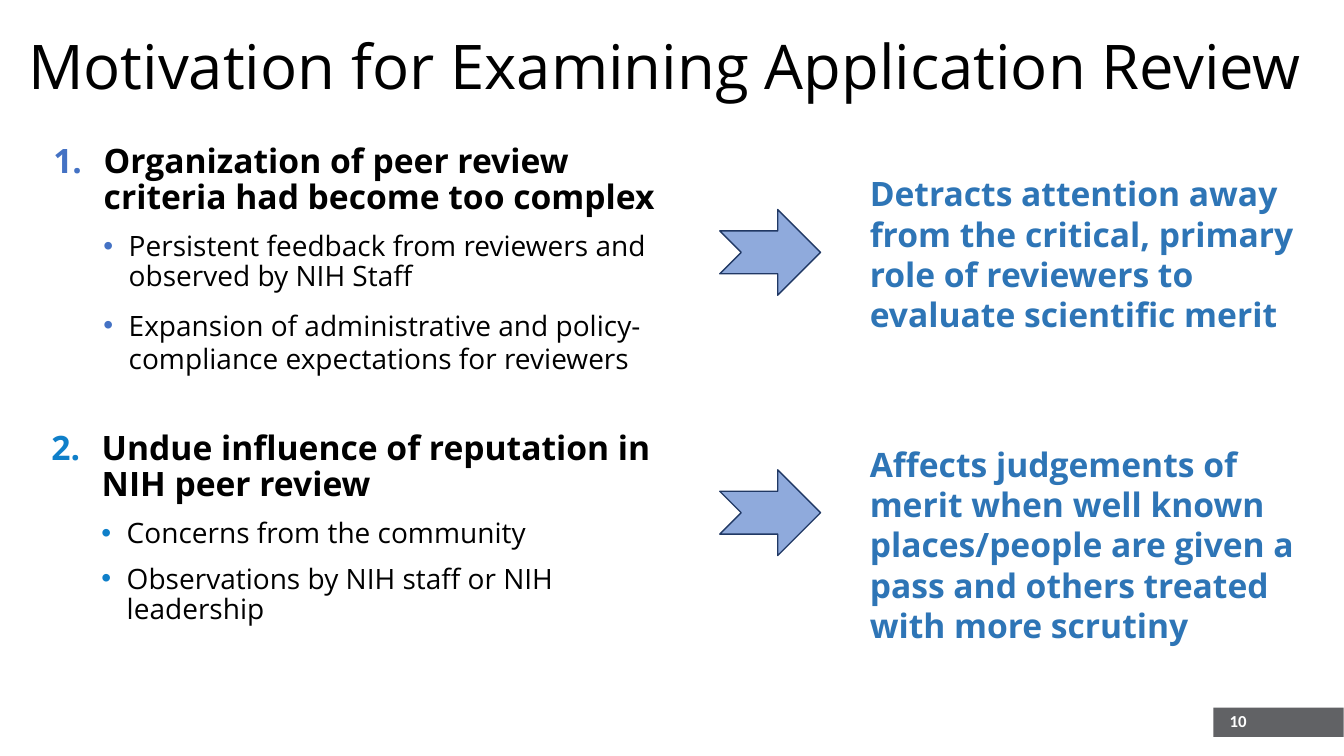
import pptx
import pptx.util
import pptx.dml.color
import pptx.enum.shapes
import pptx.enum.text
from lxml import etree

Cm, Pt = pptx.util.Cm, pptx.util.Pt
Anchor = pptx.enum.text.MSO_ANCHOR
Align = pptx.enum.text.PP_ALIGN
Kind = pptx.enum.shapes.MSO_SHAPE

# Content; lengths in cm
TITLE = "Motivation for Examining Application Review"
NUMBER = "10"
REASONS = [
    {
        "head": "Organization of peer review criteria had become too complex",
        "points": [
            ("Persistent feedback from reviewers and observed by NIH Staff", 0.9),
            ("Expansion of administrative and policy-compliance expectations for reviewers", 1.0),
        ],
        "accent": "4472C4",
        "list": (1.09, 3.51, 16.56, 6.99),
        "arrow": 5.28,
        "effect": "Detracts attention away from the critical, primary role of reviewers "
                  "to evaluate scientific merit",
        "box": (21.67, 4.24, 11.86, 4.37),
    },
    {
        "head": "Undue influence of reputation in NIH peer review",
        "points": [
            ("Concerns from the community", 0.9),
            ("Observations by NIH staff or NIH leadership", 0.9),
        ],
        "accent": "0F7FC9",
        "list": (1.04, 10.74, 16.54, 7.14),
        "arrow": 11.84,
        "effect": "Affects judgements of merit when well known places/people are given "
                  "a pass and others treated with more scrutiny",
        "box": (21.67, 11.05, 11.86, 5.38),
    },
]
FONT = "Open Sans"


def color(code):
    return pptx.dml.color.RGBColor.from_string(code)


def place(shape, area):
    shape.left, shape.top, shape.width, shape.height = map(Cm, area)


def style(para, size, code, bold=False, font=FONT):
    for run in para.runs:
        run.font.name, run.font.size, run.font.bold = font, Pt(size), bold
        run.font.color.rgb = color(code)


def setup(shape, anchor=Anchor.TOP):
    frame = shape.text_frame
    frame.word_wrap = True
    frame.auto_size = pptx.enum.text.MSO_AUTO_SIZE.NONE
    frame.vertical_anchor = anchor
    return frame


def mark(para, accent, left, hang, font, tag, **attrs):
    """Give a paragraph a coloured number or bullet with a hanging indent."""
    props = para._p.get_or_add_pPr()
    props.set("marL", str(Cm(left)))
    props.set("indent", str(-Cm(hang)))
    space = "{http://schemas.openxmlformats.org/drawingml/2006/main}"
    tint = etree.SubElement(props, space + "buClr")
    etree.SubElement(tint, space + "srgbClr", val=accent)
    etree.SubElement(props, space + "buFont", typeface=font)
    etree.SubElement(props, space + tag, **attrs)


def fill_list(shape, count, reason):
    place(shape, reason["list"])
    frame = setup(shape)
    points = reason["points"]
    frame.text = "\n".join([reason["head"]] + [text for text, _ in points])
    head, *rest = frame.paragraphs
    mark(head, reason["accent"], 1.27, 1.27, FONT, "buAutoNum",
         type="arabicPeriod", startAt=str(count))
    head.line_spacing, head.space_before, head.space_after = 0.9, Pt(0), Pt(6)
    style(head, 24, "000000", True)
    for para, (_, gap) in zip(rest, points):
        para.level = 1
        mark(para, reason["accent"], 1.9, 0.64, "Arial", "buChar", char="•")
        para.line_spacing, para.space_before, para.space_after = gap, Pt(5), Pt(6)
        style(para, 20, "000000")


def add_block(slide, kind, area, fill, line=None):
    shape = slide.shapes.add_shape(kind, *map(Cm, area))
    shape.shadow.inherit = False
    shape.fill.solid()
    shape.fill.fore_color.rgb = color(fill)
    if line:
        shape.line.color.rgb = color(line)
        shape.line.width = Pt(1)
    else:
        shape.line.fill.background()


def add_text(slide, area, text, size, code, font=FONT, anchor=Anchor.TOP):
    frame = setup(slide.shapes.add_textbox(*map(Cm, area)), anchor)
    frame.text = text
    para = frame.paragraphs[0]
    style(para, size, code, True, font)
    return para


def main():
    deck = pptx.Presentation()
    deck.slide_width, deck.slide_height = Cm(33.87), Cm(19.05)
    slide = deck.slides.add_slide(deck.slide_layouts[3])

    # Title
    title = slide.shapes.title
    place(title, (0, 0.79, 33.55, 3.68))
    frame = setup(title)
    frame.text = TITLE
    para = frame.paragraphs[0]
    para.alignment, para.line_spacing = Align.CENTER, 0.9
    style(para, 44, "000000")

    # Reasons, arrows and effects
    for count, reason in enumerate(REASONS, 1):
        fill_list(slide.placeholders[count], count, reason)
        add_block(slide, Kind.NOTCHED_RIGHT_ARROW,
                  (18.14, reason["arrow"], 2.54, 2.16), "8FAADC", "203864")
        add_text(slide, reason["box"], reason["effect"], 24, "2E75B6")

    # Page number on its bar
    add_block(slide, Kind.RECTANGLE, (30.58, 17.83, 3.28, 0.74), "616265")
    page = add_text(slide, (24.05, 17.65, 7.62, 1.02), NUMBER, 12, "FFFFFF",
                    "Calibri", Anchor.MIDDLE)
    page.alignment = Align.RIGHT

    deck.save("out.pptx")


if __name__ == "__main__":
    main()
